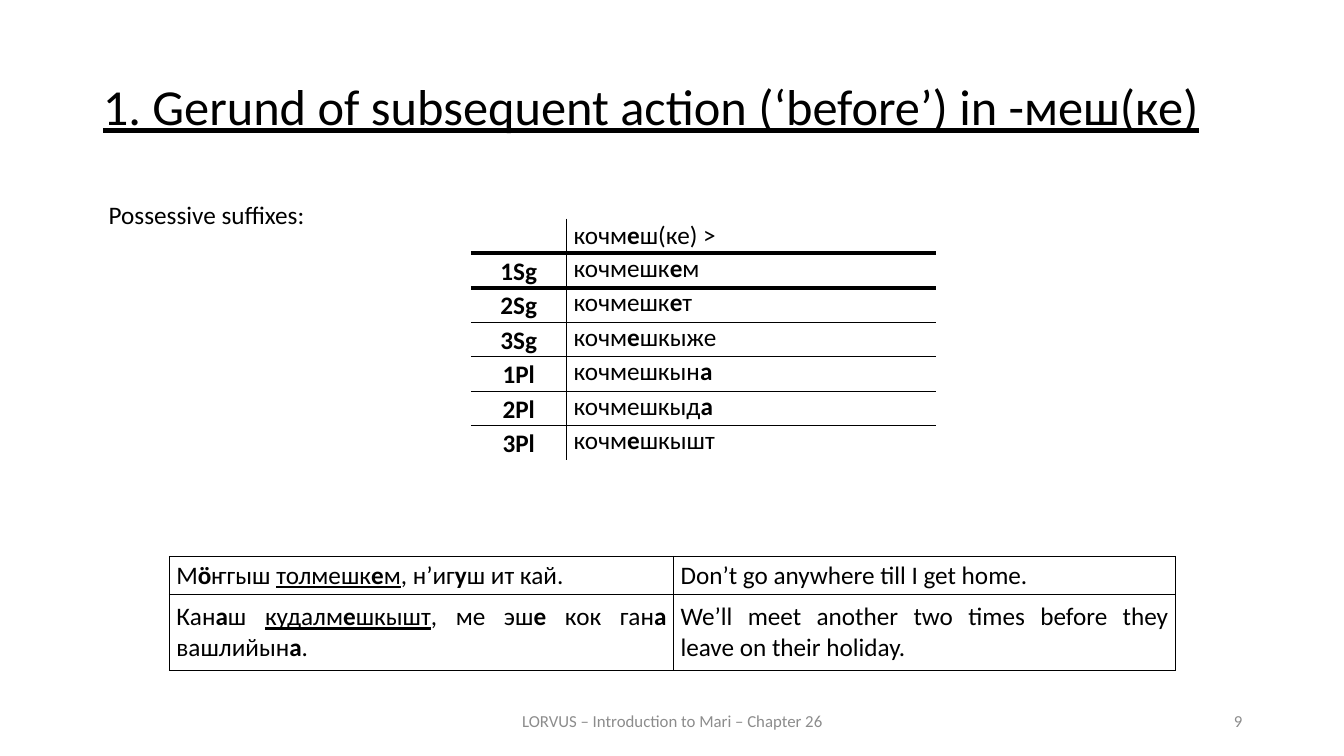
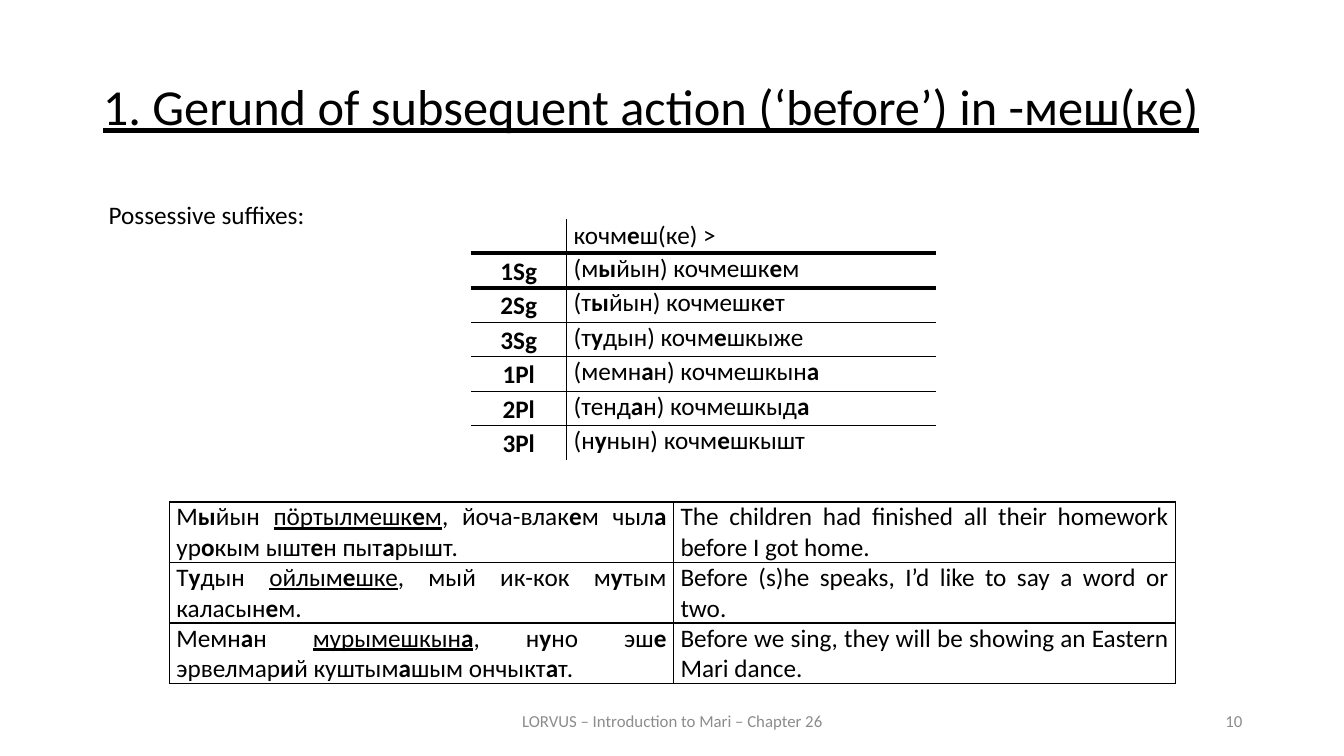
from lxml.etree import SubElement
from pptx import Presentation
from pptx.dml.color import RGBColor
from pptx.enum.text import MSO_ANCHOR, MSO_AUTO_SIZE, PP_ALIGN
from pptx.oxml.ns import qn
from pptx.util import Inches, Pt

BLACK = RGBColor(0x00, 0x00, 0x00)
GRAY = RGBColor(0x8C, 0x8C, 0x8C)
FONT = "Calibri"

TITLE = "1. Gerund of subsequent action (‘before’) in -меш(ке)"
FOOTER = "LORVUS – Introduction to Mari – Chapter 26"
LABELS = ["1Sg", "2Sg", "3Sg", "1Pl", "2Pl", "3Pl"]
HEAD = "кочм*е*ш(ке) >"

# In the texts, * switches bold and _ switches underline.
FORMS = ["кочмешк*е*м", "кочмешк*е*т", "кочм*е*шкыже",
         "кочмешкын*а*", "кочмешкыд*а*", "кочм*е*шкышт"]
OWNERS = ["(м*ы*йын)", "(т*ы*йын)", "(т*у*дын)",
          "(мемн*а*н)", "(тенд*а*н)", "(н*у*нын)"]

SLIDES = [
    dict(number=9, forms=FORMS, top=5.52, heights=[0.38, 0.75],
         anchor=MSO_ANCHOR.MIDDLE, samples=[
             ("М*ӧ*ҥгыш _толмешк*е*м_, н’иг*у*ш ит кай.",
              "Don’t go anywhere till I get home."),
             ("Кан*а*ш _кудалм*е*шкышт_, ме эш*е* кок ган*а* вашлийын*а*.",
              "We’ll meet another two times before they leave on their holiday."),
         ]),
    dict(number=10, forms=[f"{o} {f}" for o, f in zip(OWNERS, FORMS)],
         top=4.98, heights=[0.6] * 3, anchor=MSO_ANCHOR.TOP, samples=[
             ("М*ы*йын _пӧртылмешк*е*м_, йоча-влак*е*м чыл*а* "
              "ур*о*кым ышт*е*н пыт*а*рышт.",
              "The children had finished all their homework before I got home."),
             ("Т*у*дын _ойлым*е*шке_, мый ик-кок м*у*тым каласын*е*м.",
              "Before (s)he speaks, I’d like to say a word or two."),
             ("Мемн*а*н _мурымешкын*а*_, н*у*но эш*е* "
              "эрвелмар*и*й куштым*а*шым ончыкт*а*т.",
              "Before we sing, they will be showing an Eastern Mari dance."),
         ]),
]


class Deck:
    """Holds the shared style and the current slide."""

    def __init__(self):
        self.prs = Presentation()
        self.prs.slide_width = Inches(13.33)
        self.prs.slide_height = Inches(7.5)
        self.slide = None

    def start(self, number):
        self.slide = self.prs.slides.add_slide(self.prs.slide_layouts[5])
        self.title(TITLE)
        self.text(FOOTER, 4.42, 6.95, 4.5, 12, GRAY, PP_ALIGN.CENTER, MSO_ANCHOR.MIDDLE)
        self.text(str(number), 9.42, 6.95, 3, 12, GRAY, PP_ALIGN.RIGHT, MSO_ANCHOR.MIDDLE)

    def style(self, run, size, color=BLACK, bold=False, line=False):
        font = run.font
        font.name, font.size = FONT, Pt(size)
        font.bold, font.underline = bold, line
        font.color.rgb = color

    def title(self, text):
        shape = self.slide.shapes.title
        shape.left, shape.top = Inches(0.92), Inches(0.76)
        shape.width, shape.height = Inches(11.5), Inches(0.83)
        frame = shape.text_frame
        frame.text = text
        frame.auto_size = MSO_AUTO_SIZE.NONE
        frame.vertical_anchor = MSO_ANCHOR.TOP
        para = frame.paragraphs[0]
        para.alignment = PP_ALIGN.JUSTIFY
        para.line_spacing = 0.9
        para.space_before = Pt(12)
        self.style(para.runs[0], 36, line=True)

    def text(self, text, left, top, width, size, color=BLACK,
             align=PP_ALIGN.LEFT, anchor=MSO_ANCHOR.TOP):
        box = self.slide.shapes.add_textbox(
            Inches(left), Inches(top), Inches(width), Inches(0.4))
        frame = box.text_frame
        frame.word_wrap = True
        frame.vertical_anchor = anchor
        frame.text = text
        frame.paragraphs[0].alignment = align
        self.style(frame.paragraphs[0].runs[0], size, color)

    def table(self, left, top, widths, heights):
        frame = self.slide.shapes.add_table(
            len(heights), len(widths), Inches(left), Inches(top),
            Inches(sum(widths)), Inches(sum(heights)))
        grid = frame.table
        grid.first_row = grid.horz_banding = False
        for col, width in zip(grid.columns, widths):
            col.width = Inches(width)
        for row, height in zip(grid.rows, heights):
            row.height = Inches(height)
        return grid

    def cell(self, cell, text, edges, align=PP_ALIGN.JUSTIFY,
             anchor=MSO_ANCHOR.TOP, spacing=1.0):
        cell.margin_left = cell.margin_right = Inches(0.07)
        cell.margin_top = cell.margin_bottom = 0
        cell.vertical_anchor = anchor
        self.border(cell, edges)
        cell.fill.background()
        para = cell.text_frame.paragraphs[0]
        para.alignment, para.line_spacing = align, spacing
        # Odd parts between marks are underlined or bold
        for i, part in enumerate(text.split("_")):
            for j, piece in enumerate(part.split("*")):
                if piece:
                    run = para.add_run()
                    run.text = piece
                    self.style(run, 18, bold=j % 2 == 1, line=i % 2 == 1)

    def border(self, cell, edges):
        """Draw edges given as points in the order left, right, top, bottom."""
        props = cell._tc.get_or_add_tcPr()
        for side, width in zip("LRTB", edges):
            line = SubElement(props, qn(f"a:ln{side}"), w=str(Pt(width)))
            if width:
                fill = SubElement(line, qn("a:solidFill"))
                SubElement(fill, qn("a:srgbClr"), val=str(BLACK))
            else:
                SubElement(line, qn("a:noFill"))

    def suffixes(self, forms):
        rows = list(zip([""] + [f"*{x}*" for x in LABELS], [HEAD] + forms))
        grid = self.table(4.67, 2.17, [0.95, 3.66], [2.4 / len(rows)] * len(rows))
        # Horizontal rules from the top edge to the bottom edge
        rules = [0, 3, 3] + [1] * (len(rows) - 3) + [0]
        for r, (label, form) in enumerate(rows):
            above, below = rules[r:r + 2]
            self.cell(grid.cell(r, 0), label, (0, 1, above, below),
                      PP_ALIGN.CENTER, MSO_ANCHOR.MIDDLE, 1.07)
            self.cell(grid.cell(r, 1), form, (1, 0, above, below),
                      spacing=1.0 if r else 1.07)

    def samples(self, rows, top, heights, anchor):
        grid = self.table(1.68, top, [5, 4.98], heights)
        for r, row in enumerate(rows):
            for c, text in enumerate(row):
                self.cell(grid.cell(r, c), text, (1, 1, 1, 1), anchor=anchor)


def main():
    deck = Deck()
    for page in SLIDES:
        deck.start(page["number"])
        deck.text("Possessive suffixes:", 0.98, 1.93, 6.67, 18)
        deck.suffixes(page["forms"])
        deck.samples(page["samples"], page["top"], page["heights"], page["anchor"])
    deck.prs.save("out.pptx")


if __name__ == "__main__":
    main()
